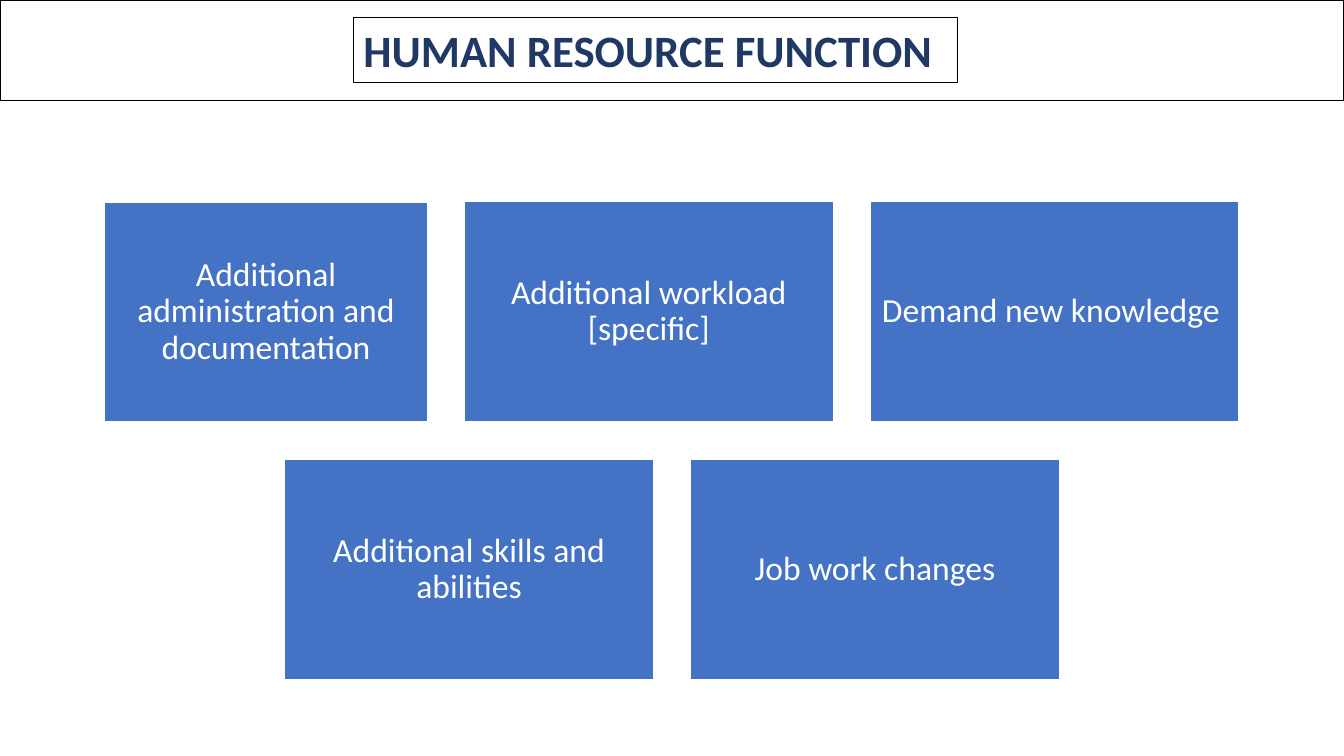
from dataclasses import dataclass, field
from typing import Any

import pptx
import pptx.dml.color
import pptx.enum.shapes
import pptx.enum.text
import pptx.util

Cm = pptx.util.Cm
Pt = pptx.util.Pt
ANCHOR = pptx.enum.text.MSO_ANCHOR
ALIGN = pptx.enum.text.PP_ALIGN

SLIDE_WIDTH = 33.87
SLIDE_HEIGHT = 19.05
BOX_WIDTH = 9.3
BOX_HEIGHT = 5.56
BOX_GAP = 0.93
FIRST_ROW_TOP = 5.08
ROW_PITCH = 6.5


@dataclass
class TextStyle:
    color: str
    font: dict[str, Any]
    paragraph: dict[str, Any] = field(default_factory=dict)
    frame: dict[str, Any] = field(default_factory=dict)


@dataclass
class Box:
    text: str
    width: float = BOX_WIDTH
    height: float = BOX_HEIGHT


INSETS = {f"margin_{side}": Cm(0.25) for side in ("left", "top", "right", "bottom")}
BOX_STYLE = TextStyle(
    color="FFFFFF",
    font={"name": "Calibri", "size": Pt(24)},
    paragraph={"alignment": ALIGN.CENTER, "line_spacing": 0.9},
    frame={"vertical_anchor": ANCHOR.MIDDLE, "word_wrap": True, **INSETS},
)
TITLE_STYLE = TextStyle(
    color="203864",
    font={"name": "Calibri", "size": Pt(32), "bold": True},
    paragraph={"alignment": ALIGN.LEFT},
    frame={"vertical_anchor": ANCHOR.TOP, "word_wrap": True},
)

ROWS = [
    [
        Box("Additional administration and documentation", 8.13, 5.54),
        Box("Additional workload [specific]"),
        Box("Demand new knowledge "),
    ],
    [
        Box("Additional skills and abilities"),
        Box("Job work changes"),
    ],
]


def rgb(color: str) -> pptx.dml.color.RGBColor:
    return pptx.dml.color.RGBColor.from_string(color)


def apply_format(target: Any, values: dict[str, Any]) -> None:
    for name, value in values.items():
        setattr(target, name, value)


def add_rectangle(
    slide: Any,
    left: float,
    top: float,
    width: float,
    height: float,
    line_color: str,
    fill_color: str | None = None,
    line_width: float = 1,
) -> Any:
    shape = slide.shapes.add_shape(
        pptx.enum.shapes.MSO_SHAPE.RECTANGLE, Cm(left), Cm(top), Cm(width), Cm(height)
    )
    shape.shadow.inherit = False
    if fill_color is None:
        shape.fill.background()
    else:
        shape.fill.solid()
        shape.fill.fore_color.rgb = rgb(fill_color)
    shape.line.color.rgb = rgb(line_color)
    shape.line.width = Pt(line_width)
    return shape


def write_text(shape: Any, text: str, style: TextStyle) -> None:
    apply_format(shape.text_frame, style.frame)
    paragraph = shape.text_frame.paragraphs[0]
    apply_format(paragraph, style.paragraph)
    run = paragraph.add_run()
    run.text = text
    apply_format(run.font, style.font)
    run.font.color.rgb = rgb(style.color)


def add_header(slide: Any) -> None:
    add_rectangle(slide, 0, 0, SLIDE_WIDTH, 2.54, "000000", "FFFFFF")
    title = add_rectangle(slide, 8.91, 0.44, 15.22, 1.63, "000000", line_width=0.75)
    write_text(title, "HUMAN RESOURCE FUNCTION", TITLE_STYLE)


def add_row(slide: Any, boxes: list[Box], top: float) -> None:
    row_width = sum(box.width for box in boxes) + BOX_GAP * (len(boxes) - 1)
    left = (SLIDE_WIDTH - row_width) / 2
    for box in boxes:
        box_top = top + (BOX_HEIGHT - box.height) / 2
        shape = add_rectangle(
            slide, left, box_top, box.width, box.height, "FFFFFF", "4472C4"
        )
        write_text(shape, box.text, BOX_STYLE)
        left += box.width + BOX_GAP


def main() -> None:
    presentation = pptx.Presentation()
    presentation.slide_width = Cm(SLIDE_WIDTH)
    presentation.slide_height = Cm(SLIDE_HEIGHT)
    slide = presentation.slides.add_slide(presentation.slide_layouts[6])
    for index, boxes in enumerate(ROWS):
        add_row(slide, boxes, FIRST_ROW_TOP + index * ROW_PITCH)
    add_header(slide)
    presentation.save("out.pptx")


if __name__ == "__main__":
    main()
